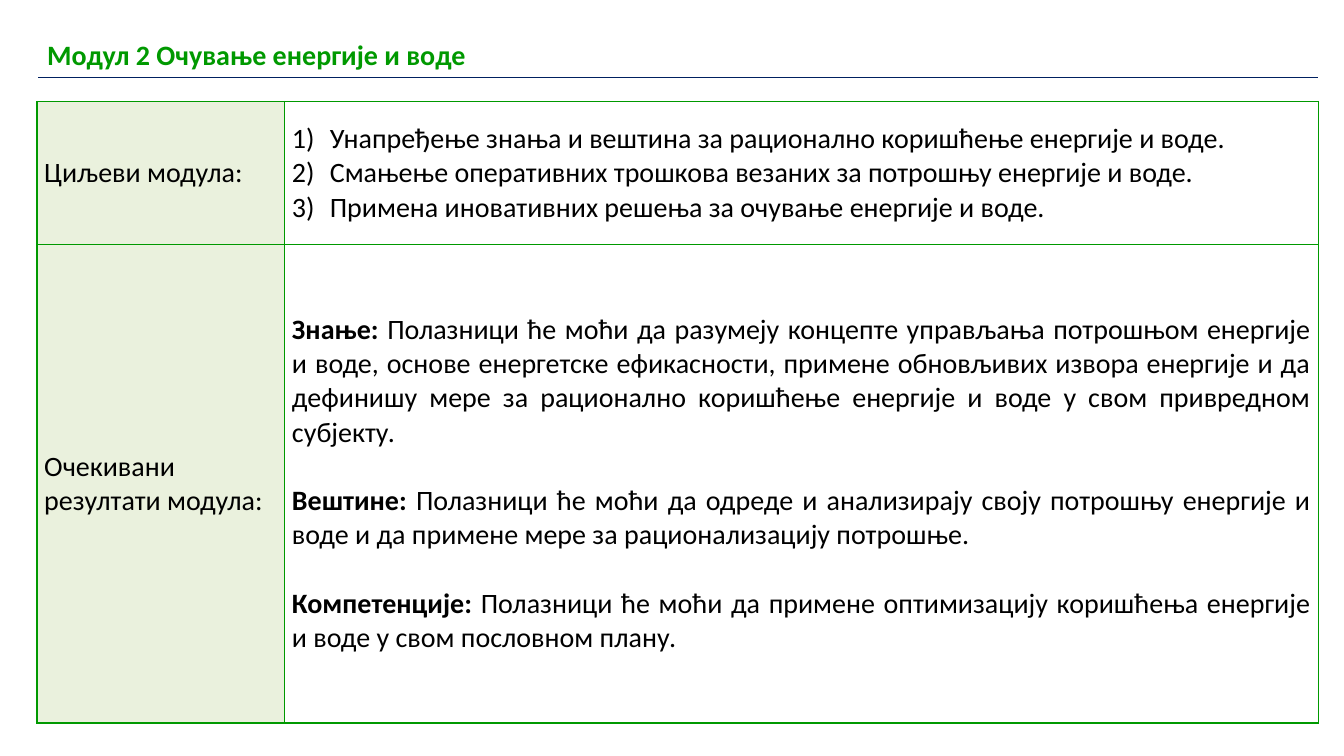
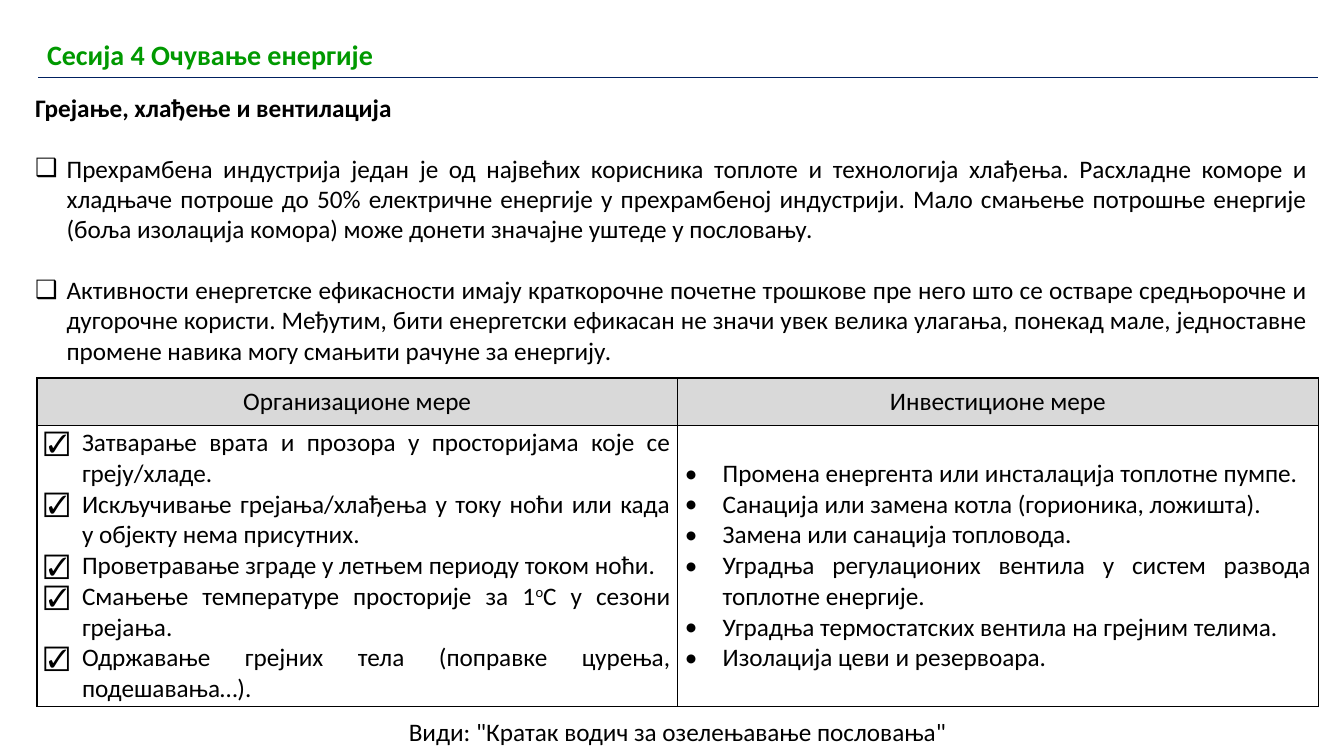
from lxml import etree
from pptx import Presentation
from pptx.dml.color import RGBColor
from pptx.enum.text import MSO_ANCHOR, PP_ALIGN
from pptx.oxml.ns import qn
from pptx.util import Pt

TOP, MIDDLE = MSO_ANCHOR.TOP, MSO_ANCHOR.MIDDLE
LEFT, CENTER, JUST = PP_ALIGN.LEFT, PP_ALIGN.CENTER, PP_ALIGN.JUSTIFY

HEX = {
    "green": "009900",
    "navy": "002060",
    "black": "000000",
    "white": "FFFFFF",
    "pale": "EAF1DD",
    "gray": "D9D9D9",
}
FONT = "Calibri"
EDGE, WIDE = 26.4, 915.2
SIDES = ("lnL", "lnR", "lnT", "lnB")
NUMBER = "arabicParenR"

GOALS = [
    "Унапређење знања и вештина за рационално коришћење енергије и воде.",
    "Смањење оперативних трошкова везаних за потрошњу енергије и воде.",
    "Примена иновативних решења за очување енергије и воде.",
]
GAINS = [
    ("Знање:", " Полазници ће моћи да разумеју концепте управљања потрошњом енергије и воде, основе енергетске ефикасности, примене обновљивих извора енергије и да дефинишу мере за рационално коришћење енергије и воде у свом привредном субјекту."),
    ("Вештине:", " Полазници ће моћи да одреде и анализирају своју потрошњу енергије и воде и да примене мере за рационализацију потрошње."),
    ("Компетенције:", " Полазници ће моћи да примене оптимизацију коришћења енергије и воде у свом пословном плану."),
]
POINTS = [
    "Прехрамбена индустрија један је од највећих корисника топлоте и технологија хлађења. Расхладне коморе и хладњаче потроше до 50% електричне енергије у прехрамбеној индустрији. Мало смањење потрошње енергије (боља изолација комора) може донети значајне уштеде у пословању.",
    "Активности енергетске ефикасности имају краткорочне почетне трошкове пре него што се остваре средњорочне и дугорочне користи. Међутим, бити енергетски ефикасан не значи увек велика улагања, понекад мале, једноставне промене навика могу смањити рачуне за енергију.",
]
HABITS = [
    ["Затварање врата и прозора у просторијама које се греју/хладе."],
    ["Искључивање грејања/хлађења у току ноћи или када у објекту нема присутних."],
    ["Проветравање зграде у летњем периоду током ноћи."],
    ["Смањење температуре просторије за 1", ("о", "sup"), "С у сезони грејања."],
    ["Одржавање грејних тела (поправке цурења, подешавања…)."],
]
WORKS = [
    "Промена енергента или инсталација топлотне пумпе.",
    "Санација или замена котла (горионика, ложишта).",
    "Замена или санација топловода.",
    "Уградња регулационих вентила у систем развода топлотне енергије.",
    "Уградња термостатских вентила на грејним телима.",
    "Изолација цеви и резервоара.",
]


def rgb(name):
    return RGBColor.from_string(HEX[name])


def put(frame, *runs, size=18, color="black", bold=False, align=JUST,
        bullet=None, hang=27, gap=0):
    para = frame.paragraphs[-1]
    if para.runs:
        para = frame.add_paragraph()
    para.alignment = align
    para.space_before = Pt(gap)
    if bullet:
        props = para._p.get_or_add_pPr()
        props.set("marL", str(Pt(hang)))
        props.set("indent", str(-Pt(hang)))
        etree.SubElement(props, qn("a:buFont"), typeface=FONT)
        if bullet == NUMBER:
            etree.SubElement(props, qn("a:buAutoNum"), type=bullet)
        else:
            etree.SubElement(props, qn("a:buChar"), char=bullet)
    for item in runs:
        text, style = (item, None) if isinstance(item, str) else item
        run = para.add_run()
        run.text = text
        font = run.font
        font.name, font.size = FONT, Pt(size)
        font.bold = bold or style == "bold"
        font.color.rgb = rgb(color)
        if style == "sup":
            run._r.get_or_add_rPr().set("baseline", "30000")


def box(slide, left, top, width, height):
    frame = slide.shapes.add_textbox(
        Pt(left), Pt(top), Pt(width), Pt(height)).text_frame
    frame.word_wrap = True
    return frame


def edge(cell, colors):
    props = cell._tc.get_or_add_tcPr()
    for side, color in zip(SIDES, colors):
        line = etree.SubElement(props, qn("a:" + side), w=str(Pt(1)))
        fill = etree.SubElement(line, qn("a:solidFill"))
        etree.SubElement(fill, qn("a:srgbClr"), val=HEX[color])


def grid(slide, top, cols, rows, border, tint=None, tinted=(),
         pad=(5.2, 0), anchor=MIDDLE):
    table = slide.shapes.add_table(
        len(rows), len(cols), Pt(EDGE), Pt(top),
        Pt(sum(cols)), Pt(sum(rows))).table
    table.first_row = table.horz_banding = False
    for col, width in zip(table.columns, cols):
        col.width = Pt(width)
    for row, height in zip(table.rows, rows):
        row.height = Pt(height)
    for y in range(len(rows)):
        for x in range(len(cols)):
            cell = table.cell(y, x)
            cell.margin_left = cell.margin_right = Pt(pad[0])
            cell.margin_top = cell.margin_bottom = Pt(pad[1])
            cell.vertical_anchor = anchor
            edge(cell, border)
            if (y, x) in tinted:
                cell.fill.solid()
                cell.fill.fore_color.rgb = rgb(tint)
            else:
                cell.fill.background()
    return [[cell.text_frame for cell in row.cells] for row in table.rows]


def page(deck, text):
    slide = deck.slides.add_slide(deck.slide_layouts[6])
    cells = grid(slide, 23.8, [WIDE], [31], ["white"] * 3 + ["navy"],
                 pad=(7.2, 3.6), anchor=TOP)
    put(cells[0][0], text, size=20, color="green", bold=True, align=LEFT)
    return slide


def module(deck):
    slide = page(deck, "Модул 2 Очување енергије и воде")
    cells = grid(slide, 72.5, [177, WIDE - 177], [102.4, 341.6],
                 ["green"] * 4, "pale", [(0, 0), (1, 0)])
    heads = ["Циљеви модула:", "Очекивани резултати модула:"]
    for row, head in zip(cells, heads):
        put(row[0], head, size=20)
    for goal in GOALS:
        put(cells[0][1], goal, size=20, bullet=NUMBER)
    for i, (lead, rest) in enumerate(GAINS):
        put(cells[1][1], (lead, "bold"), rest, size=20,
            gap=24.4 if i else 0)


def session(deck):
    slide = page(deck, "Сесија 4 Очување енергије")
    cells = grid(slide, 270, [WIDE / 2] * 2, [34, 200.5],
                 ["black"] * 4, "gray", [(0, 0), (0, 1)])
    for cell, head in zip(cells[0], ["Организационе мере", "Инвестиционе мере"]):
        put(cell, head, align=CENTER)
    for habit in HABITS:
        put(cells[1][0], *habit, bullet="☑")
    for work in WORKS:
        put(cells[1][1], work, bullet="•")
    body = box(slide, 18, 62.6, 923, 204)
    put(body, "Грејање, хлађење и вентилација", bold=True, align=LEFT)
    for point in POINTS:
        put(body, point, bullet="❑", hang=22.5, gap=21.7)
    note = box(slide, EDGE, 508.3, WIDE, 29)
    put(note, 'Види: "Кратак водич за озелењавање пословања"', align=CENTER)


def main():
    deck = Presentation()
    deck.slide_width, deck.slide_height = Pt(960), Pt(540)
    module(deck)
    session(deck)
    deck.save("out.pptx")


if __name__ == "__main__":
    main()
